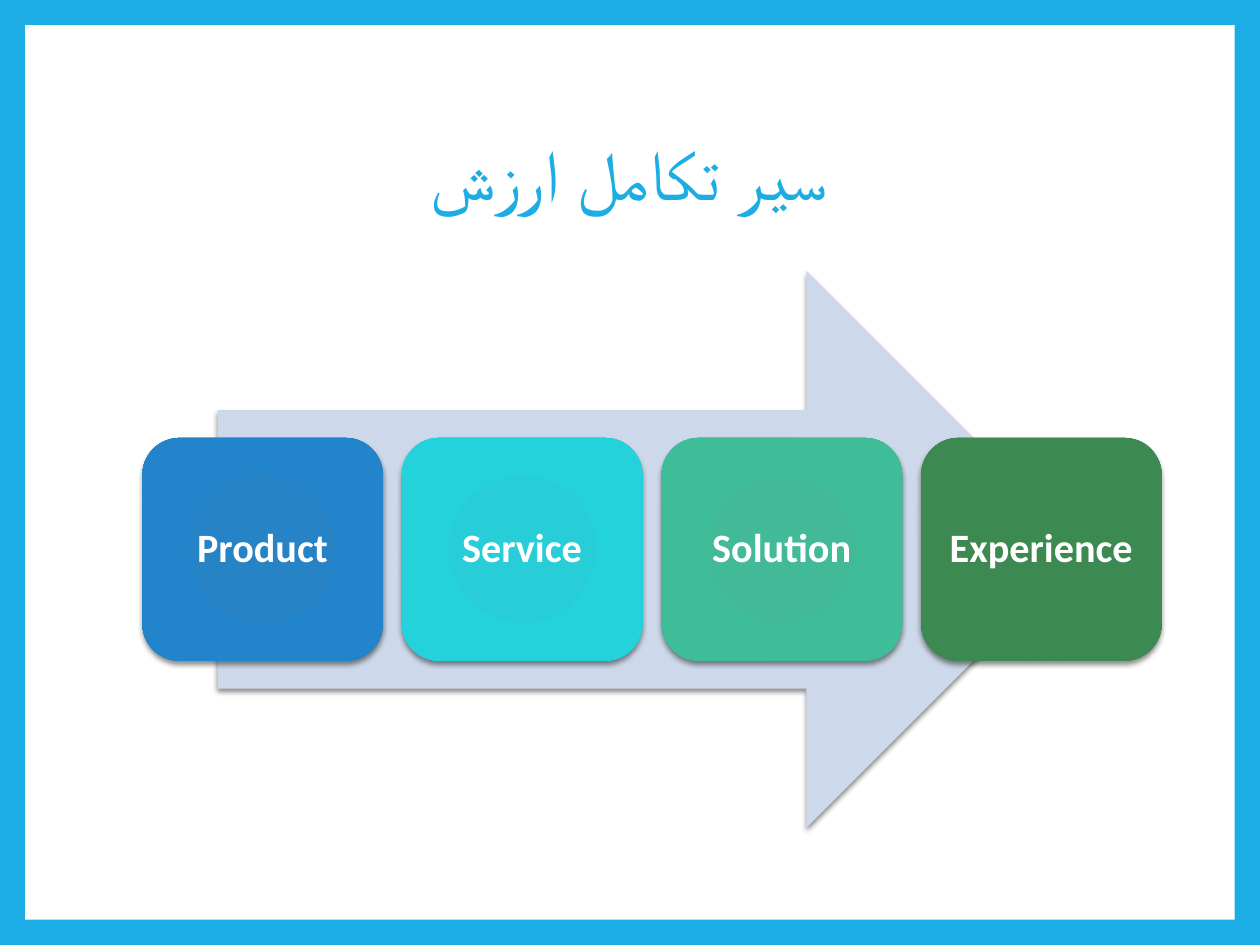
from dataclasses import dataclass

from lxml.etree import SubElement
from pptx import Presentation
from pptx.dml.color import RGBColor as RGB
from pptx.enum.shapes import MSO_SHAPE as SHAPE
from pptx.enum.text import MSO_ANCHOR as ANCHOR, PP_ALIGN as ALIGN
from pptx.oxml import parse_xml
from pptx.oxml.ns import nsdecls, qn
from pptx.util import Cm, Pt


@dataclass(frozen=True)
class Theme:
    accent: str = "1CADE4"
    white: str = "FFFFFF"
    arrow: str = "CDD9EA"
    shadow: str = "000000"
    font: str = "Calibri"
    title_size: int = 40
    card_size: int = 23


THEME = Theme()

# Label and gradient colours at 0, 90 and 100 %
STAGES = [
    ("Product", ("2683C6", "2284CA", "1479C2")),
    ("Service", ("27CED7", "23D2DB", "13C9D3")),
    ("Solution", ("42BA97", "3FBD98", "31B48E")),
    ("Experience", ("3E8853", "3C8A52", "328248")),
]


def add_block(slide, kind, box, color):
    """Add a plain filled shape without line or shadow."""
    sp = slide.shapes.add_shape(kind, *map(Cm, box))
    sp.fill.solid()
    sp.fill.fore_color.rgb = RGB.from_string(color)
    sp.line.fill.background()
    sp.shadow.inherit = False
    return sp


def add_shadow(sp):
    effects = sp._element.spPr.find(qn("a:effectLst"))
    outer = SubElement(effects, qn("a:outerShdw"), blurRad=str(Pt(3)),
                       dist=str(Pt(2)), dir="5400000", rotWithShape="0")
    color = SubElement(outer, qn("a:srgbClr"), val=THEME.shadow)
    SubElement(color, qn("a:alpha"), val="45000")


def set_radial_fill(sp, colors):
    stops = "".join(
        f'<a:gs pos="{pos}000"><a:srgbClr val="{color}"/></a:gs>'
        for pos, color in zip((0, 90, 100), colors))
    gradient = parse_xml(
        f'<a:gradFill {nsdecls("a")} rotWithShape="1"><a:gsLst>{stops}</a:gsLst>'
        '<a:path path="circle"><a:fillToRect l="100000" t="100000" '
        'r="100000" b="100000"/></a:path></a:gradFill>')
    spPr = sp._element.spPr
    spPr.replace(spPr.find(qn("a:solidFill")), gradient)


def format_text(tf, size, color, bold=False):
    tf.word_wrap = True
    tf.vertical_anchor = ANCHOR.MIDDLE
    p = tf.paragraphs[0]
    p.alignment = ALIGN.CENTER
    p.line_spacing = 0.9
    font = p.runs[0].font
    font.name, font.size, font.bold = THEME.font, Pt(size), bold
    font.color.rgb = RGB.from_string(color)
    return p


def add_frame(slide, box):
    """Coloured background with a white panel behind everything."""
    fill = slide.background.fill
    fill.solid()
    fill.fore_color.rgb = RGB.from_string(THEME.accent)
    panel = add_block(slide, SHAPE.RECTANGLE, box, THEME.white)
    slide.shapes._spTree.insert(2, panel._element)


def add_title(slide, box, text):
    title = slide.shapes.title
    title.left, title.top, title.width, title.height = map(Cm, box)
    title.text_frame.text = text
    p = format_text(title.text_frame, THEME.title_size, THEME.accent)
    p._p.get_or_add_pPr().set("rtl", "1")


def add_process(slide, box, stages):
    """Row of equal cards over an arrow, centred vertically in the box."""
    left, top, width, height = box
    # Arrow
    inset = 1.52
    arrow = add_block(slide, SHAPE.RIGHT_ARROW,
                      (left + inset, top, 17.48, height), THEME.arrow)
    add_shadow(arrow)

    # Cards
    card_w, card_h = 4.85, 0.4 * height
    pitch = (width - card_w) / (len(stages) - 1)
    card_top = top + (height - card_h) / 2
    for i, (label, colors) in enumerate(stages):
        card = add_block(slide, SHAPE.ROUNDED_RECTANGLE,
                         (left + i * pitch, card_top, card_w, card_h), colors[0])
        set_radial_fill(card, colors)
        add_shadow(card)
        tf = card.text_frame
        tf.text = label
        tf.margin_left = tf.margin_right = Cm(0.25)
        format_text(tf, THEME.card_size, THEME.white, bold=True)


def main():
    prs = Presentation()
    prs.slide_width, prs.slide_height = Cm(25.4), Cm(19.05)
    slide = prs.slides.add_slide(prs.slide_layouts[5])
    add_frame(slide, (0.51, 0.51, 24.38, 18.03))
    add_title(slide, (2.39, 1.7, 20.57, 3.76), "سیر تکامل ارزش")
    add_process(slide, (2.87, 5.46, 20.55, 11.23), STAGES)
    prs.save("out.pptx")


if __name__ == "__main__":
    main()
